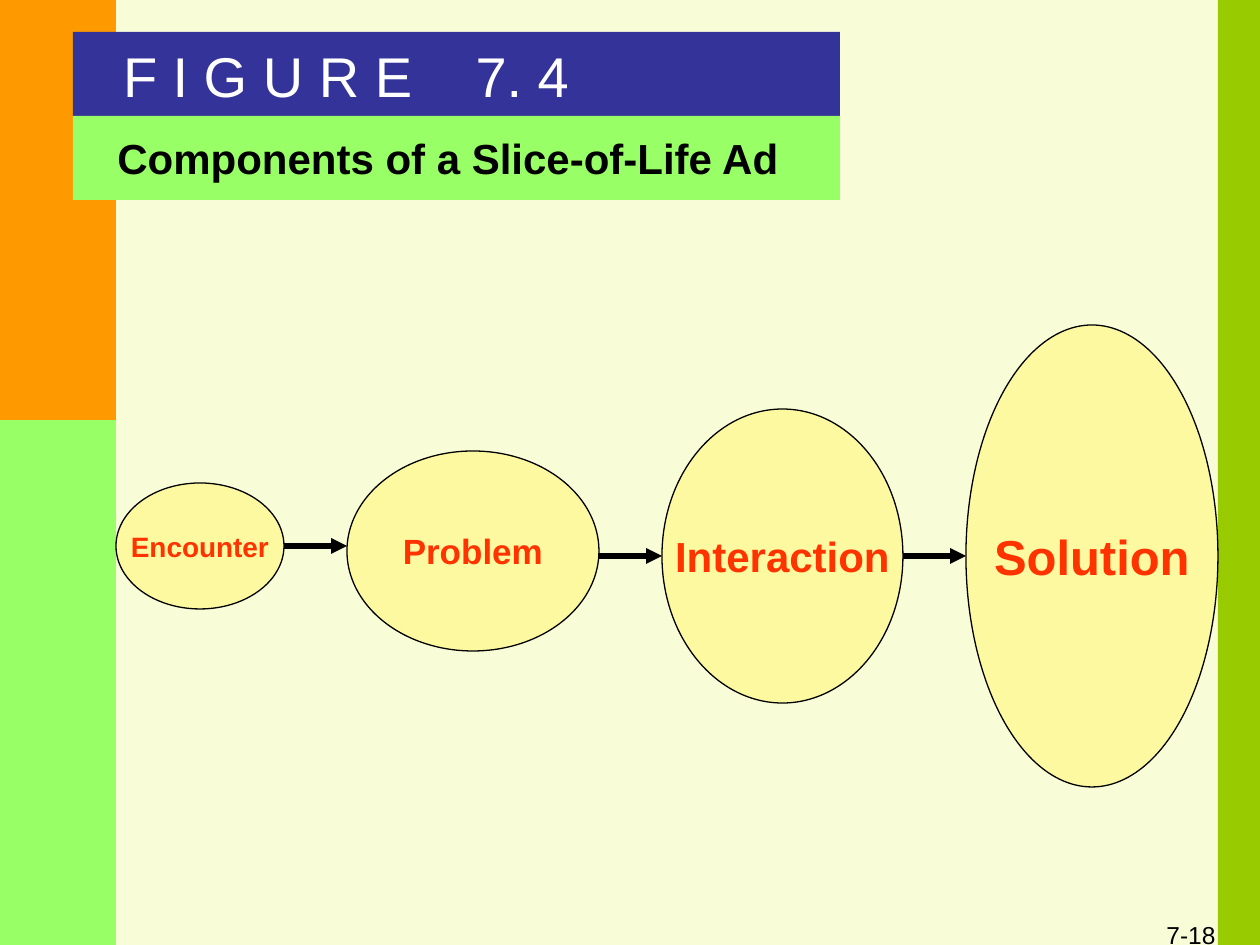
from dataclasses import dataclass

from lxml.etree import SubElement
from pptx import Presentation
from pptx.dml.color import RGBColor
from pptx.enum.shapes import MSO_CONNECTOR as Connector, MSO_SHAPE as Shape
from pptx.enum.text import MSO_ANCHOR as Anchor, PP_ALIGN as Align
from pptx.oxml.ns import qn
from pptx.util import Emu, Pt


@dataclass(frozen=True)
class Theme:
    font: str = "Arial"
    background: str = "F9FDD7"
    orange: str = "FF9900"
    light_green: str = "99FF66"
    olive: str = "99CC00"
    navy: str = "333399"
    stage_fill: str = "FDF9A1"
    stage_text: str = "FF3300"
    ink: str = "000000"
    white: str = "FFFFFF"
    figure_size: int = 32
    title_size: int = 24
    page_size: int = 14
    outline: float = 0.75
    arrow: float = 3


THEME = Theme()
WIDTH, HEIGHT = 1260, 945
SIDEBAR_WIDTH, SIDEBAR_SPLIT = 116, 420
RIGHT_BAR_LEFT = 1218
BANNER_LEFT, BANNER_TOP, BANNER_WIDTH, BANNER_HEIGHT = 73, 32, 767, 84

# label, left, top, width, height, type size
STAGES = [
    ("Encounter", 116, 483, 168, 126, 16),
    ("Problem", 347, 451, 252, 200, 20),
    ("Interaction", 662, 409, 241, 294, 24),
    ("Solution", 966, 325, 252, 462, 28),
]
ARROW_HEIGHTS = [546, 556, 556]


def px(*lengths):
    return [Emu(round(length * 914400 / 126)) for length in lengths]


def rgb(color):
    return RGBColor.from_string(color)


def style_paragraph(paragraph, size, color, bold=False, align=Align.LEFT):
    paragraph.alignment = align
    font = paragraph.font
    font.name, font.size, font.bold = THEME.font, Pt(size), bold
    font.color.rgb = rgb(color)


def add_filled(slide, preset, box, color):
    shape = slide.shapes.add_shape(preset, *px(*box))
    shape.shadow.inherit = False
    shape.fill.solid()
    shape.fill.fore_color.rgb = rgb(color)
    return shape


def add_block(slide, box, color):
    add_filled(slide, Shape.RECTANGLE, box, color).line.fill.background()


def add_stage(slide, label, left, top, width, height, size):
    stage = add_filled(slide, Shape.OVAL, (left, top, width, height), THEME.stage_fill)
    stage.line.color.rgb = rgb(THEME.ink)
    stage.line.width = Pt(THEME.outline)
    frame = stage.text_frame
    frame.word_wrap = False
    frame.vertical_anchor = Anchor.MIDDLE
    frame.text = label
    style_paragraph(frame.paragraphs[0], size, THEME.stage_text, True, Align.CENTER)


def add_arrow(slide, start, end, y):
    arrow = slide.shapes.add_connector(Connector.STRAIGHT, *px(start, y, end, y))
    arrow.line.color.rgb = rgb(THEME.ink)
    arrow.line.width = Pt(THEME.arrow)
    SubElement(arrow.line._get_or_add_ln(), qn("a:tailEnd"), type="triangle")
    SubElement(arrow._element.spPr, qn("a:effectLst"))


def add_label(slide, box, anchor, pieces, size, color, bold=False, align=Align.LEFT):
    """Add one line of text; pieces pairs each run with its letter spacing in points."""
    frame = slide.shapes.add_textbox(*px(*box)).text_frame
    frame.word_wrap = True
    frame.vertical_anchor = anchor
    paragraph = frame.paragraphs[0]
    for text, spacing in pieces:
        run = paragraph.add_run()
        run.text = text
        if spacing:
            run.font._element.set("spc", str(spacing * 100))
    style_paragraph(paragraph, size, color, bold, align)


def add_side_bars(slide):
    add_block(slide, (RIGHT_BAR_LEFT, 0, WIDTH - RIGHT_BAR_LEFT, HEIGHT), THEME.olive)
    add_block(slide, (0, 0, SIDEBAR_WIDTH, SIDEBAR_SPLIT), THEME.orange)
    add_block(slide, (0, SIDEBAR_SPLIT, SIDEBAR_WIDTH, HEIGHT - SIDEBAR_SPLIT),
              THEME.light_green)


def add_banner(slide):
    for row, color in enumerate((THEME.navy, THEME.light_green)):
        top = BANNER_TOP + row * BANNER_HEIGHT
        add_block(slide, (BANNER_LEFT, top, BANNER_WIDTH, BANNER_HEIGHT), color)
    add_label(slide, (BANNER_LEFT, 35, 546, 80), Anchor.TOP,
              [("F I G U R E", 0), (" ", 27), ("7. 4", 0)],
              THEME.figure_size, THEME.white, align=Align.CENTER)
    add_label(slide, (105, 126, 703, 63), Anchor.MIDDLE,
              [("Components of a Slice-of-Life Ad", 0)],
              THEME.title_size, THEME.ink, bold=True)


def add_flow(slide):
    for stage in STAGES:
        add_stage(slide, *stage)
    for before, after, y in zip(STAGES, STAGES[1:], ARROW_HEIGHTS):
        add_arrow(slide, before[1] + before[3], after[1], y)


def main():
    deck = Presentation()
    deck.slide_width, deck.slide_height = px(WIDTH, HEIGHT)
    slide = deck.slides.add_slide(deck.slide_layouts[6])
    slide.background.fill.solid()
    slide.background.fill.fore_color.rgb = rgb(THEME.background)
    add_label(slide, (966, 903, 262, 63), Anchor.MIDDLE, [("7-18", 0)],
              THEME.page_size, THEME.ink, align=Align.RIGHT)
    add_side_bars(slide)
    add_flow(slide)
    add_banner(slide)
    deck.save("out.pptx")


if __name__ == "__main__":
    main()
